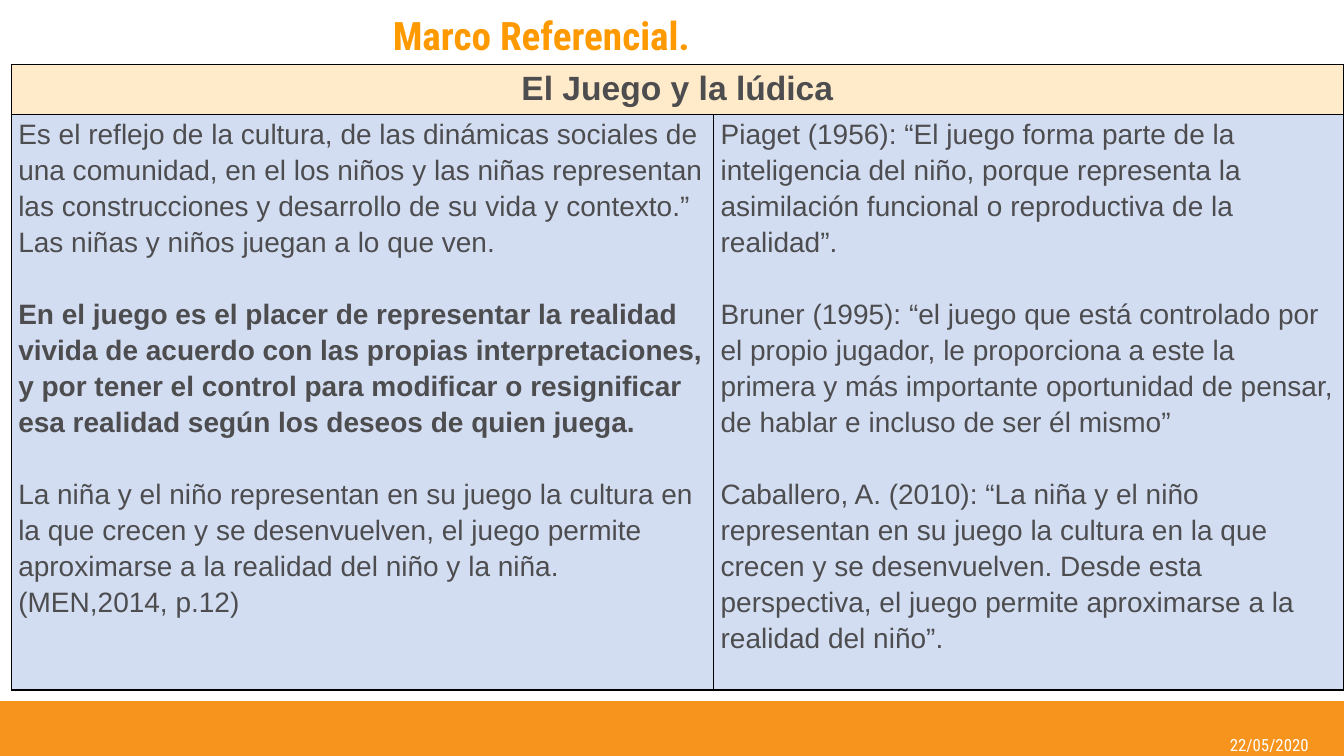
import dataclasses

import pptx
import pptx.dml.color
import pptx.enum.shapes
import pptx.enum.text
import pptx.oxml
import pptx.oxml.ns
import pptx.util

Cm = pptx.util.Cm
Pt = pptx.util.Pt
ALIGN = pptx.enum.text.PP_ALIGN
MIDDLE = pptx.enum.text.MSO_ANCHOR.MIDDLE


def rgb(value):
    return pptx.dml.color.RGBColor.from_string(value)


def apply_formats(target, formats):
    for name, value in formats.items():
        setattr(target, name, value)


@dataclasses.dataclass(frozen=True)
class Theme:
    display: str = "Roboto Condensed"
    body: str = "Arial"
    title_color: str = "FF9900"
    bar: str = "F7941D"
    white: str = "FFFFFF"
    ink: str = "4D4D4F"
    border: str = "000000"
    header_fill: str = "FFEAC9"
    body_fill: str = "D2DDF1"
    title_size: int = 28
    header_size: int = 24
    body_size: int = 20
    date_size: int = 12


class SlideBuilder:
    def __init__(self, page, theme):
        self.page = page
        self.theme = theme

    def bar(self, left, top, width, height):
        box = self.page.shapes.add_shape(
            pptx.enum.shapes.MSO_SHAPE.RECTANGLE, left, top, width, height)
        box.shadow.inherit = False
        box.fill.solid()
        box.fill.fore_color.rgb = rgb(self.theme.bar)
        box.line.fill.background()

    def fill_para(self, para, text, color, font, layout):
        apply_formats(para, layout)
        span = para.add_run()
        span.text = text
        apply_formats(span.font, font)
        span.font.color.rgb = rgb(color)

    def text_box(self, place, text, color, font, layout):
        frame = self.page.shapes.add_textbox(*place).text_frame
        margins = dict.fromkeys(
            ("margin_left", "margin_right", "margin_top", "margin_bottom"), 0)
        apply_formats(frame, {"word_wrap": True, "vertical_anchor": MIDDLE, **margins})
        self.fill_para(frame.paragraphs[0], text, color, font, layout)

    def table(self, left, top, widths, heights):
        table = self.page.shapes.add_table(
            len(heights), len(widths), left, top, sum(widths), sum(heights)).table
        for column, width in zip(table.columns, widths):
            column.width = width
        for row, height in zip(table.rows, heights):
            row.height = height
        for cell in table.iter_cells():
            self.borders(cell)
        return table

    def borders(self, cell):
        properties = cell._tc.get_or_add_tcPr()
        for side in ("lnL", "lnR", "lnT", "lnB"):
            properties.append(pptx.oxml.parse_xml(
                f'<a:{side} {pptx.oxml.ns.nsdecls("a")} w="{Pt(1)}"><a:solidFill>'
                f'<a:srgbClr val="{self.theme.border}"/></a:solidFill></a:{side}>'))

    def fill_cell(self, cell, fill, size, align, entries):
        apply_formats(cell, {"margin_left": Cm(0.18), "margin_right": Cm(0.18),
                             "margin_top": 0, "margin_bottom": 0})
        cell.fill.solid()
        cell.fill.fore_color.rgb = rgb(fill)
        frame = cell.text_frame
        for index, (text, bold, gap) in enumerate(entries):
            para = frame.add_paragraph() if index else frame.paragraphs[0]
            layout = {"alignment": align, "line_spacing": 1.15}
            if gap:
                layout["space_before"] = Pt(gap)
            font = {"name": self.theme.body, "size": Pt(size), "bold": bold}
            self.fill_para(para, text, self.theme.ink, font, layout)


PARAGRAPH_GAP = 26

CULTURE = [
    ("Es el reflejo de la cultura, de las dinámicas sociales de una comunidad, en el "
     "los niños y las niñas representan las construcciones y desarrollo de su vida y "
     "contexto.”", False, 0),
    ("Las niñas y niños juegan a lo que ven.", False, 0),
    ("En el juego es el placer de representar la realidad vivida de acuerdo con las "
     "propias interpretaciones, y por tener el control para modificar o resignificar "
     "esa realidad según los deseos de quien juega.", True, PARAGRAPH_GAP),
    ("La niña y el niño representan en su juego la cultura en la que crecen y se "
     "desenvuelven, el juego permite aproximarse a la realidad del niño y la niña.",
     False, PARAGRAPH_GAP),
    ("(MEN,2014, p.12)", False, 0),
]

AUTHORS = [
    ("Piaget (1956): “El juego forma parte de la inteligencia del niño, porque "
     "representa la asimilación funcional o reproductiva de la realidad”.", False, 0),
    ("Bruner (1995): “el juego que está controlado por el propio jugador, le "
     "proporciona a este la primera y más importante oportunidad de pensar, de hablar "
     "e incluso de ser él mismo”", False, PARAGRAPH_GAP),
    ("Caballero, A. (2010): “La niña y el niño representan en su juego la cultura en "
     "la que crecen y se desenvuelven. Desde esta perspectiva, el juego permite "
     "aproximarse a la realidad del niño”.", False, PARAGRAPH_GAP),
]


def main():
    theme = Theme()
    deck = pptx.Presentation()
    apply_formats(deck, {"slide_width": Cm(33.87), "slide_height": Cm(19.05)})
    builder = SlideBuilder(deck.slides.add_slide(deck.slide_layouts[6]), theme)

    bar_top = Cm(17.67)
    builder.bar(0, bar_top, deck.slide_width, deck.slide_height - bar_top)
    builder.text_box((Cm(30.2), Cm(18.5), Cm(3.58), Cm(0.53)), "22/05/2020",
                     theme.white,
                     {"name": theme.display, "size": Pt(theme.date_size)},
                     {"alignment": ALIGN.CENTER})
    builder.text_box((Cm(9.9), 0, Cm(19.8), Cm(1.9)), "Marco Referencial.",
                     theme.title_color,
                     {"name": theme.display, "size": Pt(theme.title_size),
                      "bold": True},
                     {"alignment": ALIGN.LEFT, "line_spacing": 0.9})

    table = builder.table(Cm(0.28), Cm(1.63), (Cm(17.7), Cm(15.88)),
                          (Cm(1.26), Cm(14.33)))
    header = table.cell(0, 0)
    header.merge(table.cell(0, 1))
    builder.fill_cell(header, theme.header_fill, theme.header_size, ALIGN.CENTER,
                      [("El Juego y la lúdica", True, 0)])
    for column, entries in enumerate((CULTURE, AUTHORS)):
        builder.fill_cell(table.cell(1, column), theme.body_fill, theme.body_size,
                          ALIGN.LEFT, entries)

    deck.save("out.pptx")


if __name__ == "__main__":
    main()
